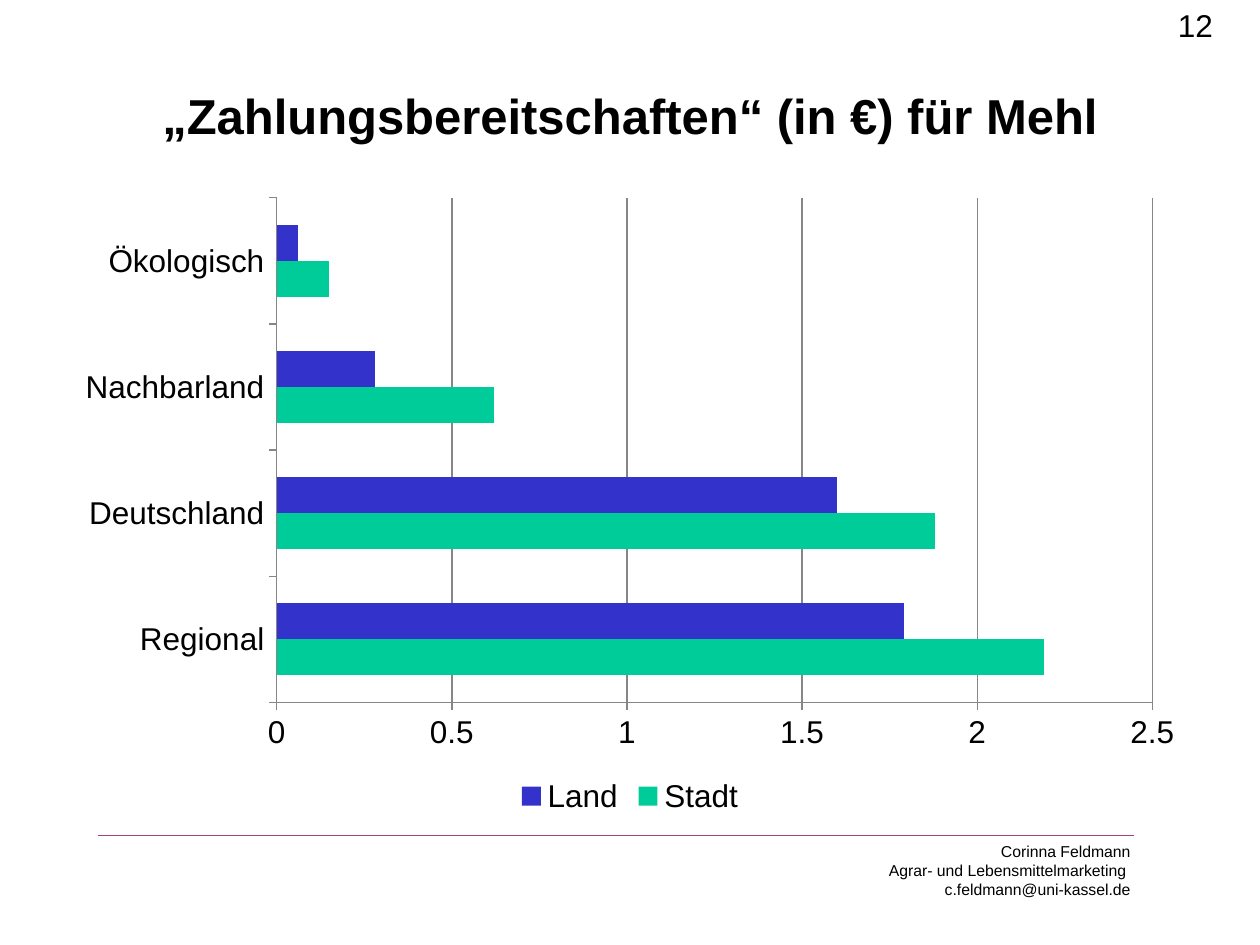
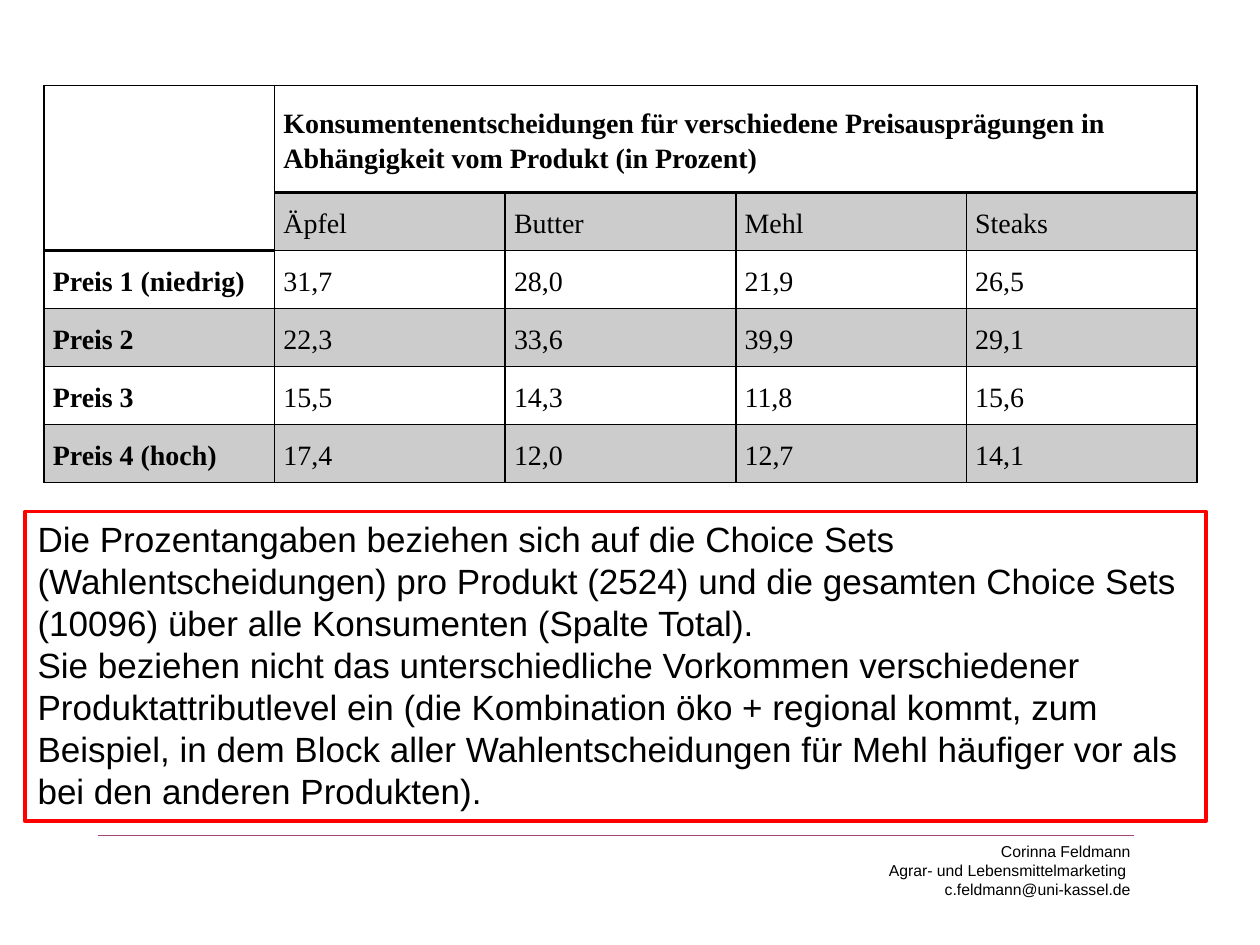
from lxml.etree import SubElement
from pptx import Presentation
from pptx.chart.data import CategoryChartData
from pptx.dml.color import RGBColor
from pptx.enum.chart import XL_CHART_TYPE, XL_LEGEND_POSITION, XL_TICK_MARK
from pptx.enum.shapes import MSO_CONNECTOR, MSO_SHAPE
from pptx.enum.text import MSO_ANCHOR, PP_ALIGN
from pptx.oxml.ns import qn
from pptx.util import Inches, Pt

BLACK = RGBColor(0x00, 0x00, 0x00)
WHITE = RGBColor(0xFF, 0xFF, 0xFF)
GREY = RGBColor(0xCC, 0xCC, 0xCC)
AXIS = RGBColor(0x86, 0x86, 0x86)
PLUM = RGBColor(0xA4, 0x42, 0x7A)
RED = RGBColor(0xFF, 0x00, 0x00)
GREEN = RGBColor(0x00, 0xCC, 0x99)
BLUE = RGBColor(0x33, 0x33, 0xCC)
SANS, SERIF = "Arial", "Times New Roman"

CATS = ["Regional", "Deutschland", "Nachbarland", "Ökologisch"]
SERIES = [("Stadt", [2.19, 1.88, 0.62, 0.15], GREEN),
          ("Land", [1.79, 1.6, 0.28, 0.06], BLUE)]

HEAD = ("Konsumentenentscheidungen für verschiedene Preisausprägungen "
        "in Abhängigkeit vom Produkt (in Prozent)")
ROWS = [["", HEAD, "", "", ""],
        ["", "Äpfel", "Butter", "Mehl", "Steaks"],
        ["Preis 1 (niedrig)", "31,7", "28,0", "21,9", "26,5"],
        ["Preis 2", "22,3", "33,6", "39,9", "29,1"],
        ["Preis 3", "15,5", "14,3", "11,8", "15,6"],
        ["Preis 4 (hoch)", "17,4", "12,0", "12,7", "14,1"]]

NOTES = ["Die Prozentangaben beziehen sich auf die Choice Sets "
         "(Wahlentscheidungen) pro Produkt (2524) und die gesamten Choice Sets "
         "(10096) über alle Konsumenten (Spalte Total).",
         "Sie beziehen nicht das unterschiedliche Vorkommen verschiedener "
         "Produktattributlevel ein (die Kombination öko + regional kommt, zum "
         "Beispiel, in dem Block aller Wahlentscheidungen für Mehl häufiger vor "
         "als bei den anderen Produkten)."]

CREDIT = ["Corinna Feldmann", "Agrar- und Lebensmittelmarketing ",
          "c.feldmann@uni-kassel.de"]


def inch(box):
    return [Inches(v) for v in box]


def write(frame, lines, size, face=SANS, bold=False, align=PP_ALIGN.LEFT, space=None):
    frame.word_wrap = True
    for i, line in enumerate(lines):
        para = frame.paragraphs[0] if i == 0 else frame.add_paragraph()
        para.alignment = align
        para.line_spacing = space
        run = para.add_run()
        run.text = line
        font = run.font
        font.size, font.name, font.bold = Pt(size), face, bold
        font.color.rgb = BLACK


def add_text(slide, box, lines, size, **style):
    frame = slide.shapes.add_textbox(*inch(box)).text_frame
    write(frame, lines, size, **style)


def add_title(slide, box, text):
    title = slide.shapes.title
    title.left, title.top, title.width, title.height = inch(box)
    title.text_frame.vertical_anchor = MSO_ANCHOR.MIDDLE
    write(title.text_frame, [text], 28, bold=True, align=PP_ALIGN.CENTER)


def add_foot(slide, box):
    # Rule across the page, credit flush right below it
    left, top, width, height = box
    rule = slide.shapes.add_connector(
        MSO_CONNECTOR.STRAIGHT, *inch([left + width, top, left, top]))
    rule.line.color.rgb = PLUM
    rule.line.width = Pt(0.75)
    SubElement(rule._element.spPr, qn("a:effectLst"))
    wide = 3.85
    add_text(slide, [left + width + 0.07 - wide, top, wide, height],
             CREDIT, 9, align=PP_ALIGN.RIGHT)


def add_bars(slide, box):
    data = CategoryChartData()
    data.categories = CATS
    for name, vals, _ in SERIES:
        data.add_series(name, vals)
    chart = slide.shapes.add_chart(
        XL_CHART_TYPE.BAR_CLUSTERED, *inch(box), data).chart
    chart.has_title = False
    chart.font.size, chart.font.name = Pt(18), SANS
    chart.font.color.rgb = BLACK
    chart.has_legend = True
    chart.legend.position = XL_LEGEND_POSITION.BOTTOM
    chart.legend.include_in_layout = False

    # Bars
    plot = chart.plots[0]
    plot.gap_width = 150
    plot.vary_by_categories = False
    for bar, (_, _, color) in zip(plot.series, SERIES):
        bar.format.fill.solid()
        bar.format.fill.fore_color.rgb = color

    # Axes
    scale = chart.value_axis
    scale.minimum_scale, scale.maximum_scale, scale.major_unit = 0, 2.5, 0.5
    scale.has_major_gridlines = True
    for axis in (scale, chart.category_axis):
        axis.major_tick_mark = XL_TICK_MARK.OUTSIDE
        axis.minor_tick_mark = XL_TICK_MARK.NONE
        axis.format.line.color.rgb = AXIS
        axis.format.line.width = Pt(0.75)
    grid = scale.major_gridlines.format.line
    grid.color.rgb = AXIS
    grid.width = Pt(0.75)


def edge(cell, base):
    props = cell._tc.get_or_add_tcPr()
    for side in "LRTB":
        width = base if side == "B" else 1
        line = SubElement(props, qn(f"a:ln{side}"), w=str(Pt(width)))
        fill = SubElement(line, qn("a:solidFill"))
        SubElement(fill, qn("a:srgbClr"), val=str(BLACK))


def add_grid(slide, box):
    table = slide.shapes.add_table(len(ROWS), len(ROWS[0]), *inch(box)).table
    for col in table.columns:
        col.width = Inches(box[2] / len(ROWS[0]))
    for i, row in enumerate(table.rows):
        row.height = Inches(0.46 if i else 0.85)
    for i, row in enumerate(ROWS):
        for j, text in enumerate(row):
            cell = table.cell(i, j)
            thick = i == 0 or (i, j) == (1, 0)
            edge(cell, 2 if thick else 1)
            shade = i % 2 == 1 and (i, j) != (1, 0)
            cell.fill.solid()
            cell.fill.fore_color.rgb = GREY if shade else WHITE
            cell.vertical_anchor = MSO_ANCHOR.MIDDLE
            cell.margin_left = cell.margin_right = Inches(0.07)
            cell.margin_top = cell.margin_bottom = 0
            if text:
                write(cell.text_frame, [text], 16, face=SERIF,
                      bold=i == 0 or j == 0, space=1.15)
    # Empty corner and spanning heading
    table.cell(0, 0).merge(table.cell(1, 0))
    table.cell(0, 1).merge(table.cell(0, 4))


def add_note(slide, box):
    note = slide.shapes.add_shape(MSO_SHAPE.RECTANGLE, *inch(box))
    note.shadow.inherit = False
    note.fill.background()
    note.line.color.rgb = RED
    note.line.width = Pt(2.25)
    note.text_frame.vertical_anchor = MSO_ANCHOR.TOP
    write(note.text_frame, NOTES, 20)


def main():
    deck = Presentation()
    deck.slide_width, deck.slide_height = Inches(10), Inches(7.5)
    only, blank = deck.slide_layouts[5], deck.slide_layouts[6]
    foot = [0.78, 6.63, 8.22, 0.56]

    # Chart slide
    slide = deck.slides.add_slide(only)
    add_foot(slide, foot)
    add_title(slide, [0.75, 0.29, 8.5, 1.25],
              "„Zahlungsbereitschaften“ (in €) für Mehl")
    add_bars(slide, [0.5, 1.47, 9, 5.04])
    add_text(slide, [9.25, 0, 0.75, 0.52], ["12"], 18)

    # Table slide
    slide = deck.slides.add_slide(blank)
    add_foot(slide, foot)
    add_grid(slide, [0.35, 0.68, 9.15, 3.15])
    add_note(slide, [0.2, 4.06, 9.37, 2.46])

    deck.save("out.pptx")


if __name__ == "__main__":
    main()
